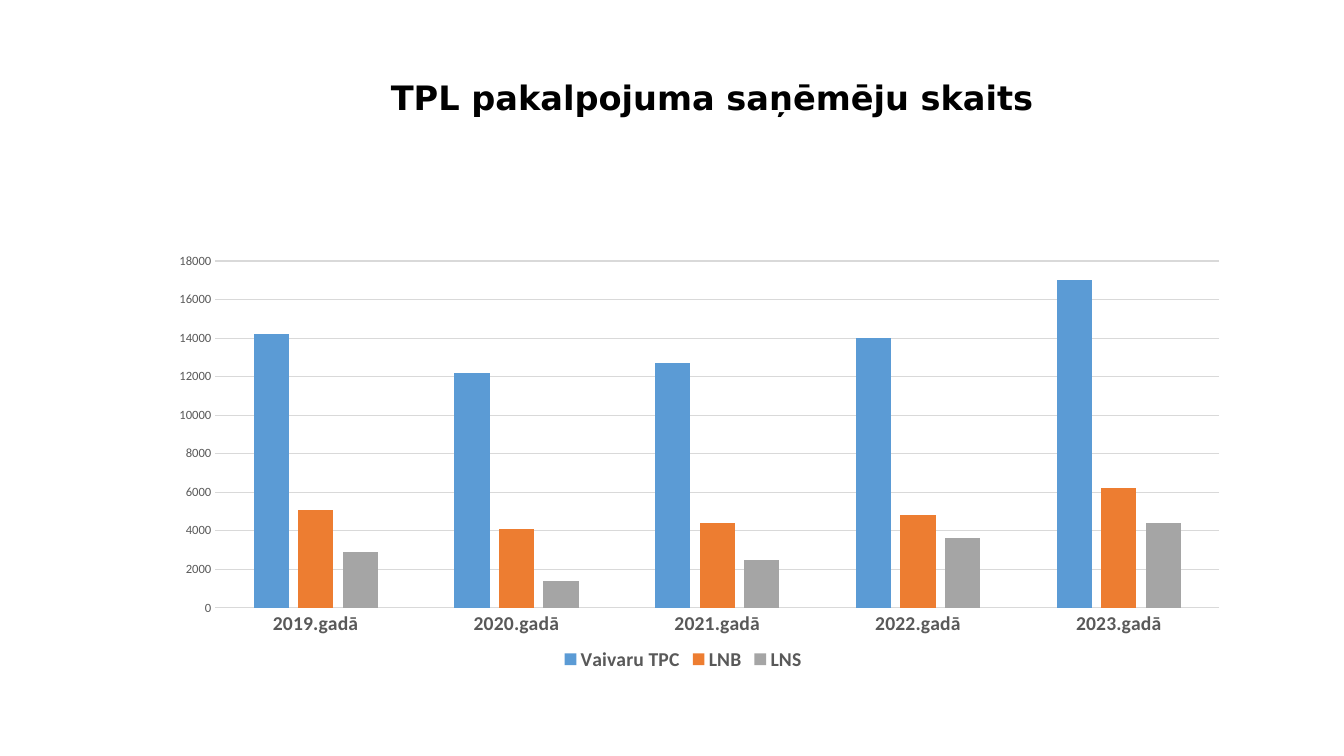
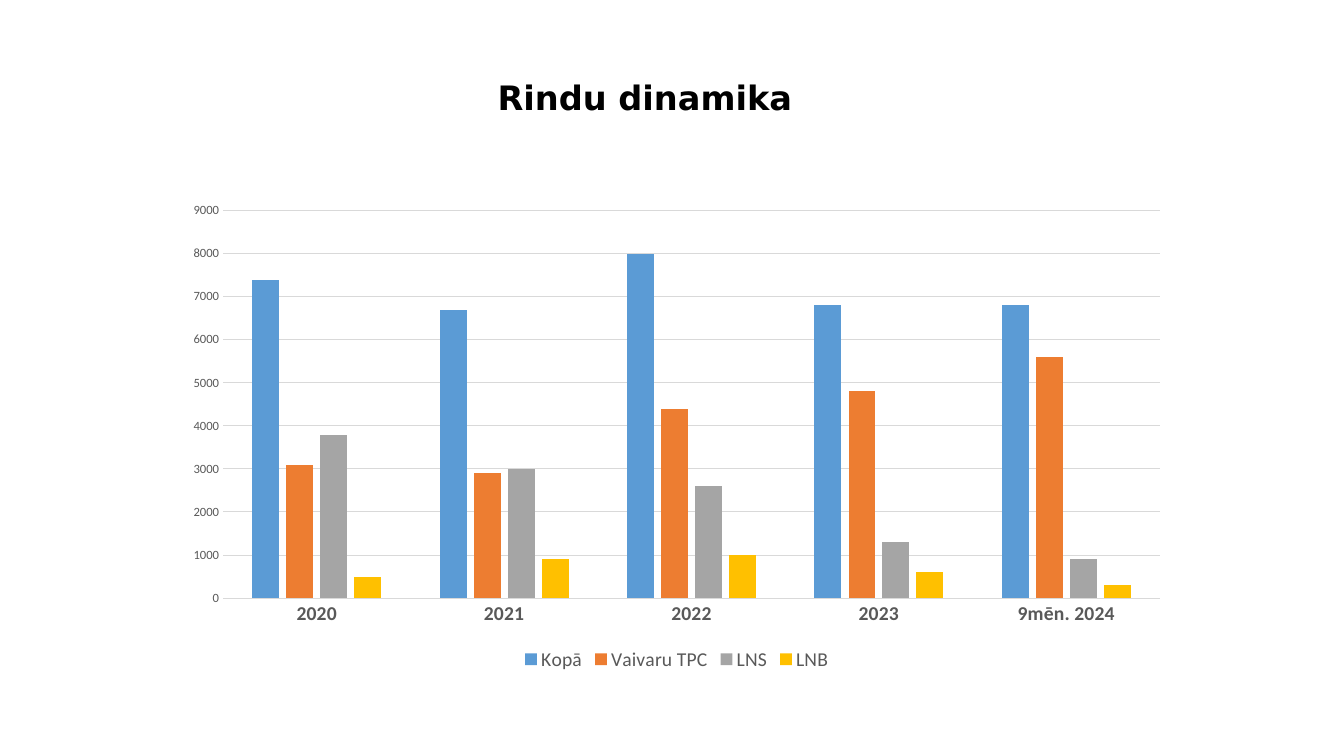
from pptx import Presentation
from pptx import util as u
from pptx.chart.data import CategoryChartData
from pptx.dml.color import RGBColor
from pptx.enum import chart as ec, text
from pptx.oxml import parse_xml
from pptx.oxml.ns import nsdecls, qn

HUES = {"ink": "000000", "label": "595959", "rule": "D9D9D9",
        "blue": "5B9BD5", "orange": "ED7D31", "gray": "A5A5A5", "gold": "FFC000"}
BARS = ("blue", "orange", "gray", "gold")
TITLE = (9.6, 1.07, 22.58, 2.87)
TOP, TALL = 4.88, 12.14

SLIDES = [
    {"title": "TPL pakalpojuma saņēmēju skaits", "indent": 0,
     "left": 2.84, "width": 28.75, "bold": True,
     "plot": {"x": 0.09, "y": 0.14, "w": 0.88, "h": 0.72},
     "cats": [f"{year}.gadā" for year in range(2019, 2024)],
     "rows": {"Vaivaru TPC": (14200, 12200, 12700, 14000, 17000),
              "LNB": (5100, 4100, 4400, 4800, 6200),
              "LNS": (2900, 1400, 2500, 3600, 4400)}},
    {"title": "Rindu dinamika", "indent": 2.69,
     "left": 4.37, "width": 25.37, "bold": False, "plot": None,
     "cats": ["2020", "2021", "2022", "2023", "9mēn. 2024"],
     "rows": {"Kopā": (7400, 6700, 8000, 6800, 6800),
              "Vaivaru TPC": (3100, 2900, 4400, 4800, 5600),
              "LNS": (3800, 3000, 2600, 1300, 900),
              "LNB": (500, 900, 1000, 600, 300)}},
]


def hue(name):
    return RGBColor.from_string(HUES[name])


def style(font, size, color, bold=False, face="Calibri"):
    font.name, font.size, font.bold = face, u.Pt(size), bold
    font.color.rgb = hue(color)


def rule(line):
    line.color.rgb = hue("rule")
    line.width = u.Pt(0.75)


def add_title(slide, box, words, indent):
    frame = slide.shapes.add_textbox(*map(u.Cm, box)).text_frame
    frame.word_wrap = True
    frame.vertical_anchor = text.MSO_ANCHOR.MIDDLE
    frame.margin_left = u.Cm(0.25 + indent)
    para = frame.paragraphs[0]
    para.line_spacing = 0.9
    run = para.add_run()
    run.text = words
    style(run.font, 24, "ink", True, "DejaVu Sans")


def set_plot(chart, plot):
    """Fix the inner plot area, given as shares of the chart's size."""
    area = chart.element.find(".//" + qn("c:plotArea"))
    for old in area.findall(qn("c:layout")):
        area.remove(old)
    modes = "".join(f'<c:{key}Mode val="edge"/>' for key in "xy")
    sizes = "".join(f'<c:{key} val="{share}"/>' for key, share in plot.items())
    area.insert(0, parse_xml(
        f'<c:layout {nsdecls("c")}><c:manualLayout><c:layoutTarget val="inner"/>'
        f'{modes}{sizes}</c:manualLayout></c:layout>'))


def style_axes(chart):
    cat, val = chart.category_axis, chart.value_axis
    for axis, size, bold in ((cat, 14, True), (val, 9, False)):
        axis.major_tick_mark = axis.minor_tick_mark = ec.XL_TICK_MARK.NONE
        style(axis.tick_labels.font, size, "label", bold)
    rule(cat.format.line)
    val.format.line.fill.background()
    val.has_major_gridlines = True
    rule(val.major_gridlines.format.line)


def add_bars(slide, box, cats, rows, bold, plot):
    data = CategoryChartData()
    data.categories = cats
    for name, vals in rows.items():
        data.add_series(name, vals)
    chart = slide.shapes.add_chart(
        ec.XL_CHART_TYPE.COLUMN_CLUSTERED, *map(u.Cm, box), data).chart
    chart.has_title = False
    style(chart.font, 10, "ink")
    style_axes(chart)
    chart.has_legend = True
    chart.legend.position = ec.XL_LEGEND_POSITION.BOTTOM
    chart.legend.include_in_layout = False
    style(chart.legend.font, 14, "label", bold)
    bars = chart.plots[0]
    bars.gap_width, bars.overlap = 219, -27
    bars.vary_by_categories = False
    for row, color in zip(bars.series, BARS):
        row.format.fill.solid()
        row.format.fill.fore_color.rgb = hue(color)
    if plot:
        set_plot(chart, plot)


def main():
    deck = Presentation()
    deck.slide_width, deck.slide_height = u.Cm(33.87), u.Cm(19.05)
    for page in SLIDES:
        slide = deck.slides.add_slide(deck.slide_layouts[6])
        add_title(slide, TITLE, page["title"], page["indent"])
        add_bars(slide, (page["left"], TOP, page["width"], TALL),
                 page["cats"], page["rows"], page["bold"], page["plot"])
    deck.save("out.pptx")


if __name__ == "__main__":
    main()
